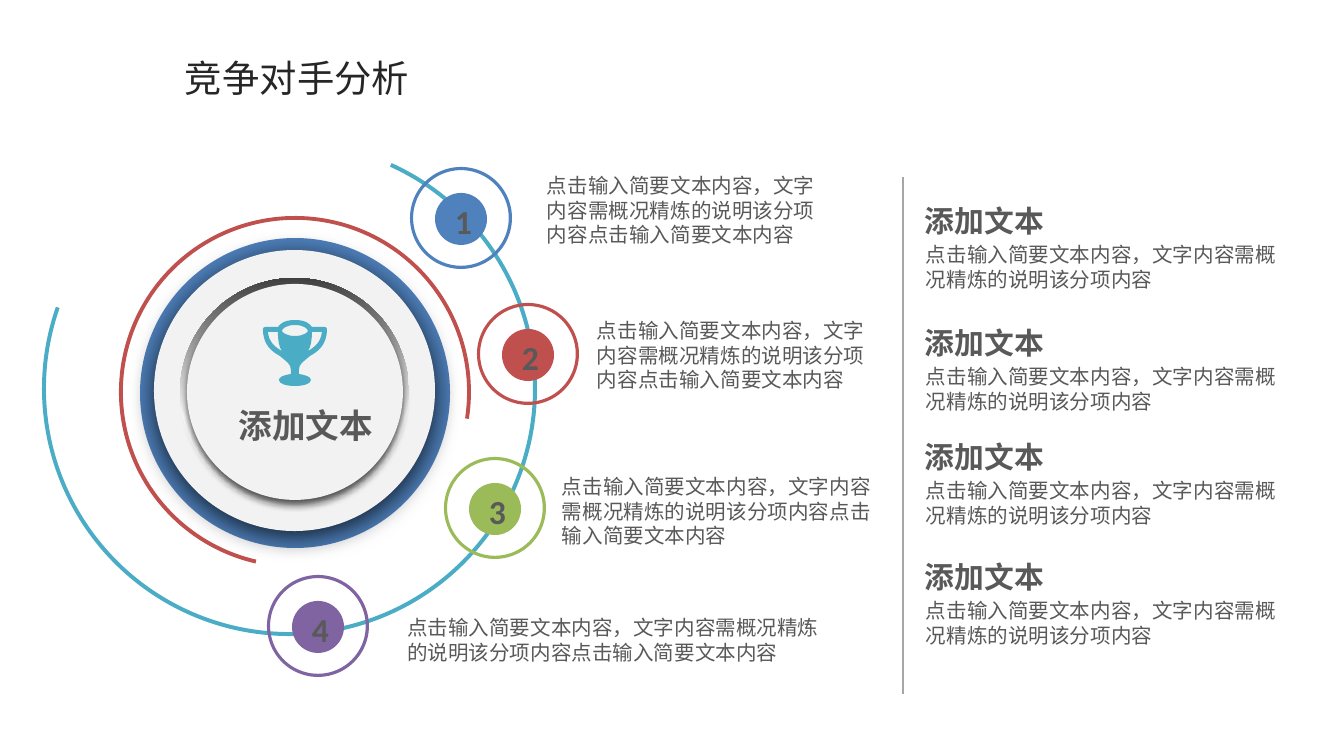
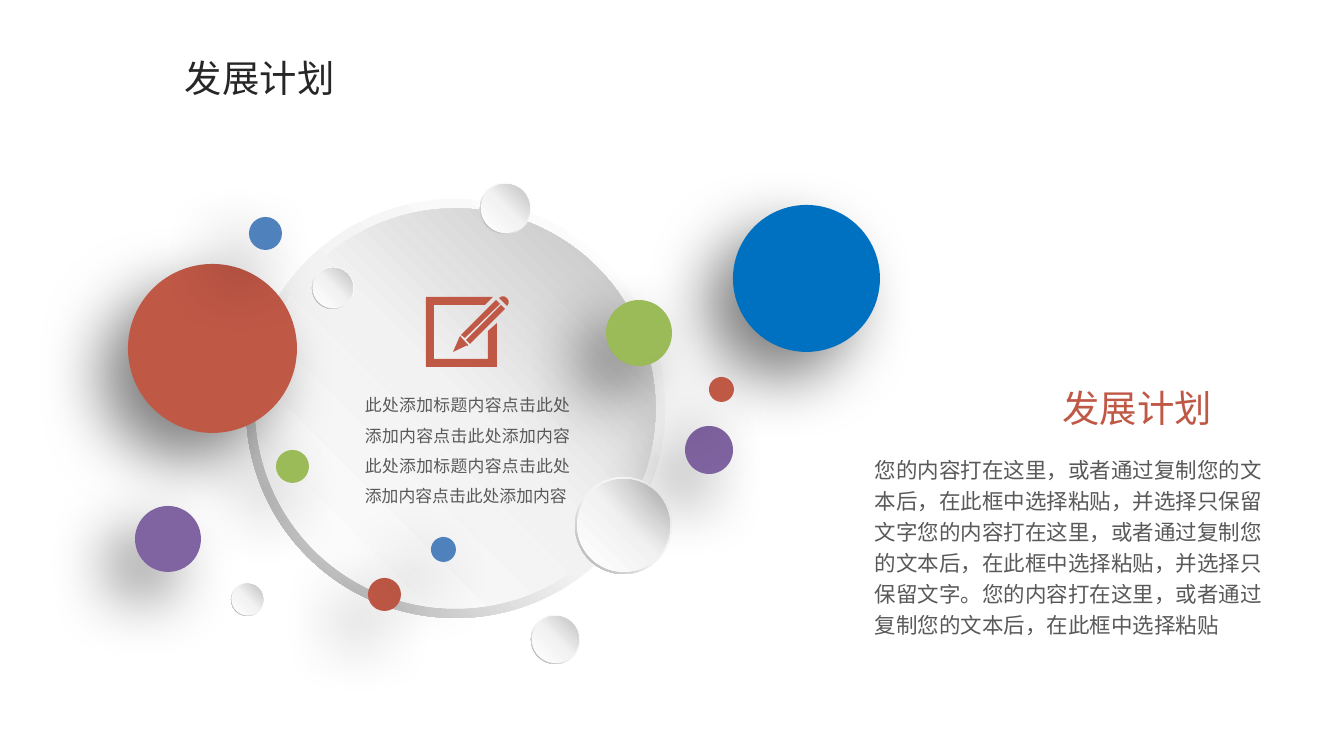
from lxml import etree
from pptx import Presentation
from pptx.dml.color import RGBColor
from pptx.enum.shapes import MSO_CONNECTOR, MSO_SHAPE
from pptx.enum.text import MSO_AUTO_SIZE, PP_ALIGN
from pptx.oxml.ns import qn
from pptx.util import Emu, Pt

PX = 914400 / 134.4
OVAL, DONUT, ARC, RECT = MSO_SHAPE.OVAL, MSO_SHAPE.DONUT, MSO_SHAPE.BLOCK_ARC, MSO_SHAPE.RECTANGLE
LEFT, CENTER, RIGHT, JUSTIFY = PP_ALIGN.LEFT, PP_ALIGN.CENTER, PP_ALIGN.RIGHT, PP_ALIGN.JUSTIFY

CJK, NUMERALS = "Noto Sans CJK SC", "Calibri"
INK, GREY, PALE, RULE = "262626", "595959", "F2F2F2", "A6A6A6"
BLUE, RED, GREEN, PURPLE, TEAL = "4F81BD", "C0504D", "9BBB59", "8064A2", "4BACC6"
BRICK, BRIGHT_BLUE = "C05846", "0070C0"

# Gradients: stops, then angle
RIM = ((39, "FFFFFF"), (100, "404040")), 270
PEARL_EDGE = ((0, "FFFFFF"), (55, "F2F2F2"), (100, "A6A6A6")), 135
PEARL_FACE = ((0, "FFFFFF"), (51, "F2F2F2"), (100, "BFBFBF")), 315
# Shadows: opacity, blur, distance, direction
PLATE_SHADOW, DIAL_SHADOW, ORB_SHADOW = (76, 14, 3, 90), (67, 4, 3, 90), (50, 35, 20, 135)

# Slide 1
POINT = "点击输入简要文本内容，文字内容需概况精炼的说明该分项内容点击输入简要文本内容"
SUMMARY = "点击输入简要文本内容，文字内容需概况精炼的说明该分项内容"
ADD_TEXT = "添加文本"
ARCS = [  # left, top, size, rotation, adjustments, colour
    (42, 141, 495, 199.5, (56.92, 215.88, 0.008), TEAL),
    (119, 216, 352, 8.1, (56.92, 0.43, 0.011), RED),
]
DISCS = [  # left, top, size, fill, shadow
    (140, 238, 310, BLUE, None),
    (154, 250, 281, PALE, PLATE_SHADOW),
    (180, 278, 229, RIM, None),
    (187, 284, 216, PALE, DIAL_SHADOW),
]
BADGES = [  # ring corner, colour, text box
    ((410, 167), BLUE, (537, 168, 294, 85)),
    ((477, 303), RED, (587, 313, 296, 85)),
    ((444, 457), GREEN, (552, 469, 331, 85)),
    ((267, 575), PURPLE, (397, 610, 433, 60)),
]
SUMMARY_TOPS = [198, 320, 434, 554]

# Outlines: a pair is a corner, six numbers are a cubic curve.
# The cup is given as its right half, measured from the axis.
CUP_HALF = [(0, 0), (11, 0, 15, 4, 17, 7), (30, 7), (31, 7, 32, 8, 32, 9),
            (32, 26, 22, 32, 15, 36), (8, 42, 4, 44, 4, 50), (4, 54),
            (11, 55, 16, 57, 16, 60), (16, 64, 8, 66, 0, 66)]
MOUTH_HALF = [(0, 5), (9, 5, 13, 9, 13, 11), (13, 12, 9, 16, 0, 16)]
HANDLE = [(13, 31), (16, 27, 17, 20, 17, 12), (27, 12), (26, 22, 20, 27, 13, 31)]
TROPHY_AT = 295, 320

# Slide 2
PLAN = "发展计划"
CENTRE_TEXT = "此处添加标题内容点击此处添加内容点击此处添加内容" * 2
PLAN_TEXT = ("您的内容打在这里，或者通过复制您的文本后，在此框中选择粘贴，并选择只保留文字"
             "您的内容打在这里，或者通过复制您的文本后，在此框中选择粘贴，并选择只保留文字。"
             "您的内容打在这里，或者通过复制您的文本后，在此框中选择粘贴")
PEARLS = [(246, 199, 419), (575, 477, 97), (312, 267, 42),
          (531, 615, 49), (480, 183, 51), (231, 583, 33)]
ORBS = [
    (733, 205, 147, BRIGHT_BLUE), (128, 264, 169, BRICK), (135, 506, 66, PURPLE),
    (276, 450, 33, GREEN), (249, 217, 33, BLUE), (368, 578, 33, BRICK),
    (431, 537, 25, BLUE), (606, 300, 66, GREEN), (685, 426, 48, PURPLE),
    (709, 377, 25, BRICK),
]
PENCIL = [
    [(468, 345), (460, 336), (453, 352)],
    [(496, 300), (461, 335), (465, 338), (500, 304)],
    [(466, 340), (470, 344), (505, 309), (501, 305)],
    [(507, 298), (503, 294, 499, 298, 499, 298), (507, 306), (507, 306, 511, 302, 507, 298)],
    [(488, 359), (434, 359), (434, 305), (485, 305), (493, 297), (426, 297),
     (426, 367), (497, 367), (497, 323), (488, 331)],
]
PENCIL_JOINT = 467, 345, 1


def px(n):
    return Emu(round(n * PX))


def rgb(color):
    return RGBColor.from_string(color)


def add_xml(parent, tag, **attrs):
    return etree.SubElement(parent, qn(tag), {k: str(v) for k, v in attrs.items()})


def style(shape, fill, shadow=None):
    """Fill with a colour or a (stops, angle) gradient, without an outline."""
    sppr = shape.element.spPr
    if isinstance(fill, str):
        shape.fill.solid()
        shape.fill.fore_color.rgb = rgb(fill)
    else:
        stops, angle = fill
        shape.fill.background()
        grad = etree.Element(qn("a:gradFill"), rotWithShape="1")
        gs_list = add_xml(grad, "a:gsLst")
        for pos, color in stops:
            add_xml(add_xml(gs_list, "a:gs", pos=pos * 1000), "a:srgbClr", val=color)
        add_xml(grad, "a:lin", ang=angle * 60000, scaled=0)
        sppr.replace(sppr.find(qn("a:noFill")), grad)
    shape.line.fill.background()
    shape.shadow.inherit = False
    if shadow:
        alpha, blur, dist, angle = shadow
        outer = add_xml(sppr.find(qn("a:effectLst")), "a:outerShdw", blurRad=Pt(blur),
                        dist=Pt(dist), dir=angle * 60000, algn="ctr", rotWithShape=0)
        color = add_xml(outer, "a:srgbClr", val="000000")
        add_xml(color, "a:alpha", val=alpha * 1000)


def add_preset(parent, kind, x, y, size, fill, shadow=None, adj=(), rotation=0):
    shape = parent.shapes.add_shape(kind, px(x), px(y), px(size), px(size))
    for i, value in enumerate(adj):
        shape.adjustments[i] = value
    shape.rotation = rotation
    style(shape, fill, shadow)


def add_text(s, text, box, size=11, color=GREY, font=CJK, bold=False,
             align=LEFT, wrap=True, inset=(10, 5), spacing=None):
    tf = s.shapes.add_textbox(*map(px, box)).text_frame
    tf.word_wrap = wrap
    tf.auto_size = MSO_AUTO_SIZE.SHAPE_TO_FIT_TEXT
    tf.margin_left = tf.margin_right = px(inset[0])
    tf.margin_top = tf.margin_bottom = px(inset[1])
    p = tf.paragraphs[0]
    p.alignment = align
    if spacing:
        p.line_spacing = spacing
    r = p.add_run()
    r.text = text
    r.font.size, r.font.bold = Pt(size), bold
    r.font.color.rgb = rgb(color)
    r.font.name = font
    add_xml(r.font._element, "a:ea", typeface=font)


def pairs(seg):
    return list(zip(seg[::2], seg[1::2]))


def mirror(outline):
    """Reflect an outline in the vertical axis, running backwards."""
    x, y = outline[-1][-2:]
    result = [(-x, y)]
    for before, seg in reversed(list(zip(outline, outline[1:]))):
        route = pairs(before[-2:] + seg[:-2])
        result.append(tuple(n for x, y in reversed(route) for n in (-x, y)))
    return result


def add_outline(parent, outlines, fill, at=(0, 0)):
    """Draw outlines as one shape; inner outlines become holes."""
    placed = [[[(px(x + at[0]), px(y + at[1])) for x, y in pairs(seg)] for seg in outline]
              for outline in outlines]
    fb = parent.shapes.build_freeform(*placed[0][0][0], scale=1.0)
    for i, (start, *segs) in enumerate(placed):
        if i:
            fb.move_to(*start[0])
        fb.add_line_segments([seg[-1] for seg in segs], close=False)
        fb.add_line_segments([], close=True)
    shape = fb.convert_to_shape()
    ends = [el for el in shape.element.iter(qn("a:lnTo"))]
    for el, seg in zip(ends, [seg for outline in placed for seg in outline[1:]]):
        if len(seg) == 3:
            curve = etree.Element(qn("a:cubicBezTo"))
            for x, y in seg:
                add_xml(curve, "a:pt", x=x - shape.left, y=y - shape.top)
            el.getparent().replace(el, curve)
    style(shape, fill)


def add_nested(s, x, y, size, outer, inner, kind=OVAL, shadow=None, adj=()):
    """A round shape with a slightly smaller disc centred in it."""
    group = s.shapes.add_group_shape()
    inset = size * 0.0225
    add_preset(group, kind, x, y, size, outer, shadow, adj)
    add_preset(group, OVAL, x + inset, y + inset, size - 2 * inset, inner)


def new_slide(prs, title):
    s = prs.slides.add_slide(prs.slide_layouts[6])
    add_text(s, title, (175, 50, 38 * len(title) + 20, 55), size=20, color=INK, wrap=False)
    return s


def build_rivals(prs):
    s = new_slide(prs, "竞争对手分析")
    for x, y, size, rotation, adj, color in ARCS:
        add_preset(s, ARC, x, y, size, color, adj=adj, rotation=rotation)
    for x, y, size, fill, shadow in DISCS:
        add_preset(s, OVAL, x, y, size, fill, shadow)
    for number, ((x, y), color, box) in enumerate(BADGES, 1):
        add_preset(s, DONUT, x, y, 102, color, adj=(0.031,))
        add_preset(s, OVAL, x + 25, y + 26, 52, color)
        add_text(s, str(number), (x + 32, y + 27, 44, 54), size=18, font=NUMERALS,
                 bold=True, wrap=False, inset=(13, 7))
        add_text(s, POINT, box)

    trophy = [half + mirror(half)[1:] for half in (CUP_HALF, MOUTH_HALF)]
    add_outline(s, trophy + [HANDLE, mirror(HANDLE)], TEAL, TROPHY_AT)
    add_text(s, ADD_TEXT, (223, 398, 163, 54), size=18, bold=True, align=RIGHT,
             wrap=False, inset=(13, 7))

    divider = s.shapes.add_connector(MSO_CONNECTOR.STRAIGHT, px(903), px(177), px(903), px(694))
    divider.line.color.rgb = rgb(RULE)
    divider.line.width = Pt(0.75)
    add_xml(divider.element.spPr, "a:effectLst")
    for y in SUMMARY_TOPS:
        add_text(s, SUMMARY, (916, y + 39, 378, 60))
        add_text(s, ADD_TEXT, (913, y, 141, 47), size=16, bold=True, align=RIGHT, wrap=False)


def build_plan(prs):
    s = new_slide(prs, PLAN)
    for x, y, size in PEARLS:
        add_nested(s, x, y, size, PEARL_EDGE, PEARL_FACE, kind=DONUT, adj=(0.049,))
    icon = s.shapes.add_group_shape()
    for outline in PENCIL:
        add_outline(icon, [outline], BRICK)
    add_preset(icon, RECT, *PENCIL_JOINT, BRICK)
    add_text(s, CENTRE_TEXT, (352, 378, 231, 136), size=9, align=JUSTIFY,
             inset=(13, 7), spacing=1.5)
    add_text(s, PLAN, (936, 378, 403, 59), size=20, color=BRICK, align=CENTER, inset=(13, 7))
    add_text(s, PLAN_TEXT, (865, 447, 411, 198), size=11.5, spacing=1.2)
    for x, y, size, color in ORBS:
        add_nested(s, x, y, size, color, color, shadow=ORB_SHADOW)


def main():
    prs = Presentation()
    prs.slide_width, prs.slide_height = px(1344), px(756)
    build_rivals(prs)
    build_plan(prs)
    prs.save("out.pptx")


if __name__ == "__main__":
    main()
